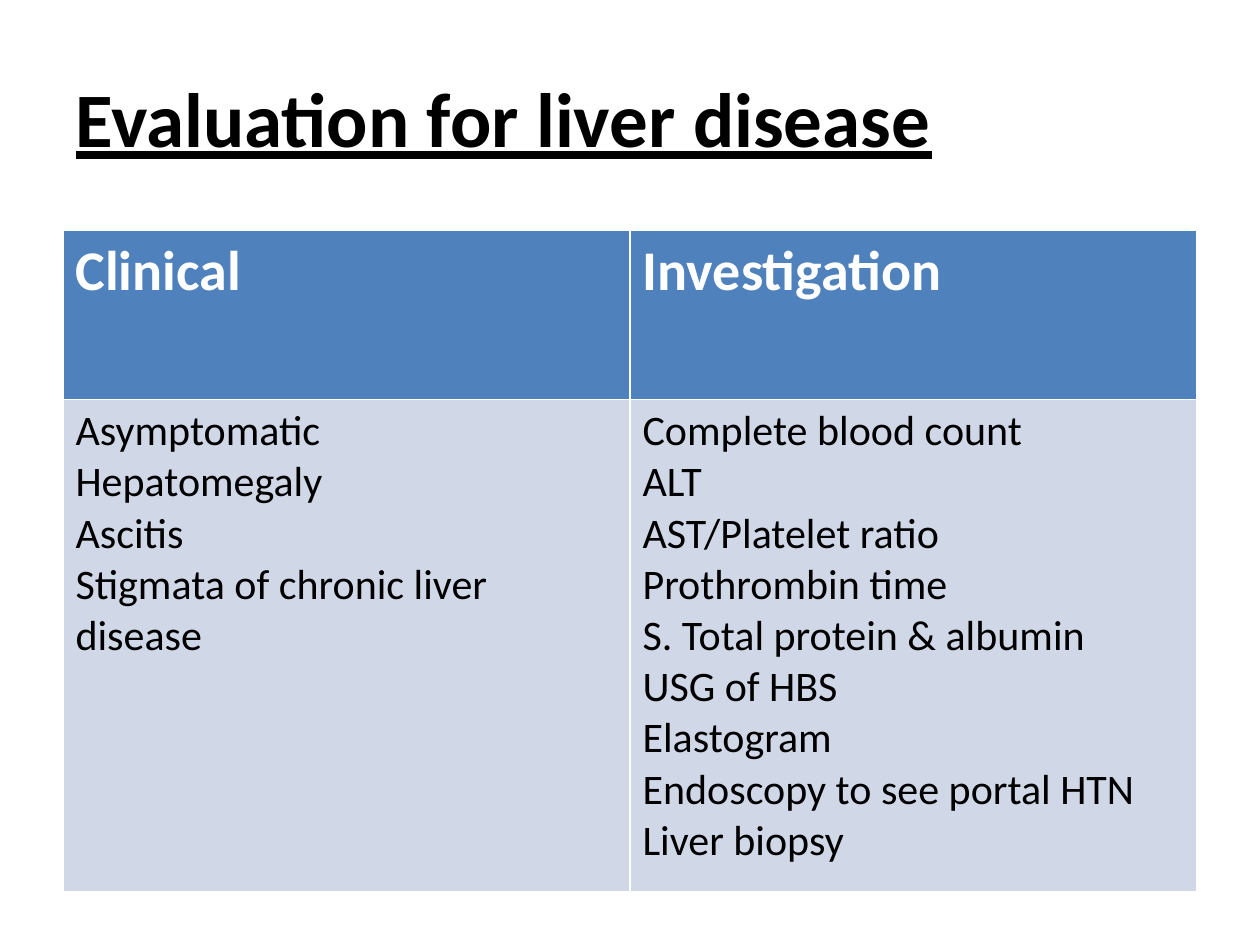
from pptx import Presentation
from pptx.dml.color import RGBColor
from pptx.enum.text import MSO_ANCHOR, PP_ALIGN
from pptx.util import Cm, Pt

HEADING = "Evaluation for liver disease"
EVALUATION = {
    "Clinical": [
        "Asymptomatic",
        "Hepatomegaly",
        "Ascitis",
        "Stigmata of chronic liver disease",
    ],
    "Investigation": [
        "Complete blood count",
        "ALT",
        "AST/Platelet ratio",
        "Prothrombin time",
        "S. Total protein & albumin",
        "USG of HBS",
        "Elastogram",
        "Endoscopy to see portal HTN",
        "Liver biopsy",
    ],
}

BLACK = RGBColor(0x00, 0x00, 0x00)
WHITE = RGBColor(0xFF, 0xFF, 0xFF)
BLUE = RGBColor(0x4F, 0x81, 0xBD)
PALE_BLUE = RGBColor(0xD0, 0xD8, 0xE8)

HEADING_FONT = {"size": Pt(44), "bold": True, "underline": True}
HEADER_FONT = {"size": Pt(32), "bold": True}
ITEM_FONT = {"size": Pt(24), "bold": False}

LEFT, WIDTH = Cm(1.27), Cm(22.86)
HEADING_BOX = {"left": LEFT, "top": Cm(0.76), "width": WIDTH, "height": Cm(3.18)}
TABLE_TOP = Cm(4.65)
ROW_HEIGHTS = [Cm(3.4), Cm(9.93)]


def write(frame, lines, font_format, color):
    frame.text = "\n".join(lines)
    for paragraph in frame.paragraphs:
        paragraph.alignment = PP_ALIGN.LEFT
        for run in paragraph.runs:
            run.font.name = "Calibri"
            run.font.color.rgb = color
            for attribute, value in font_format.items():
                setattr(run.font, attribute, value)


def fill_cell(cell, lines, font_format, color, background):
    cell.fill.solid()
    cell.fill.fore_color.rgb = background
    write(cell.text_frame, lines, font_format, color)


def main():
    presentation = Presentation()
    presentation.slide_width, presentation.slide_height = Cm(25.4), Cm(19.05)
    slide = presentation.slides.add_slide(presentation.slide_layouts[5])

    heading = slide.shapes.title
    for attribute, value in HEADING_BOX.items():
        setattr(heading, attribute, value)
    heading.text_frame.vertical_anchor = MSO_ANCHOR.MIDDLE
    write(heading.text_frame, [HEADING], HEADING_FONT, BLACK)

    evaluation = slide.shapes.add_table(
        len(ROW_HEIGHTS), len(EVALUATION), LEFT, TABLE_TOP, WIDTH, sum(ROW_HEIGHTS)
    ).table
    for row, height in zip(evaluation.rows, ROW_HEIGHTS):
        row.height = height
    for column, (header, items) in enumerate(EVALUATION.items()):
        fill_cell(evaluation.cell(0, column), [header], HEADER_FONT, WHITE, BLUE)
        fill_cell(evaluation.cell(1, column), items, ITEM_FONT, BLACK, PALE_BLUE)

    presentation.save("out.pptx")


if __name__ == "__main__":
    main()
